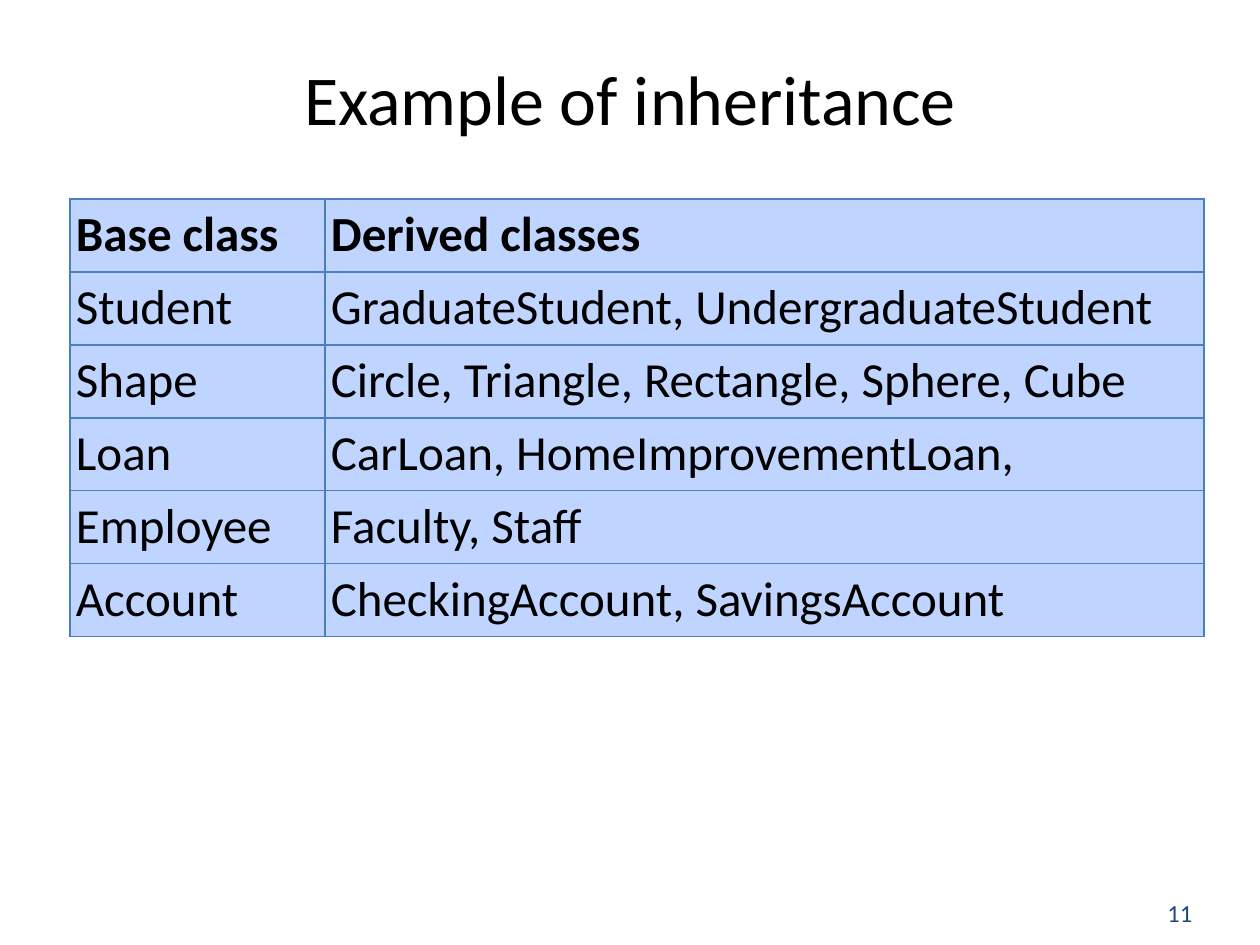
from dataclasses import dataclass

from lxml.etree import SubElement
from pptx import Presentation
from pptx.dml.color import RGBColor as RGB
from pptx.enum.text import MSO_ANCHOR as Anchor, PP_ALIGN as Align
from pptx.oxml.ns import qn
from pptx.util import Emu, Pt

PX = 914400 // 126  # EMU in one px


@dataclass(frozen=True)
class Theme:
    font: str = "Calibri"
    text: str = "000000"
    number: str = "1F497D"
    cell: str = "BFD4FF"
    border: str = "4B7EBC"
    title_size: int = 40
    table_size: int = 28
    number_size: int = 14
    border_width: float = 0.75


@dataclass(frozen=True)
class Label:
    text: str
    box: tuple[int, int, int, int]
    size: int
    color: str
    align: Align


@dataclass(frozen=True)
class ClassRow:
    base: str
    derived: str
    bold: bool = False


THEME = Theme()

LABELS = [
    Label("11", (1155, 892, 84, 42), THEME.number_size, THEME.number, Align.LEFT),
    Label("Example of inheritance", (63, 48, 1134, 98),
          THEME.title_size, THEME.text, Align.CENTER),
]

ROWS = [
    ClassRow("Base class", "Derived classes", bold=True),
    ClassRow("Student", "GraduateStudent, UndergraduateStudent"),
    ClassRow("Shape", "Circle, Triangle, Rectangle, Sphere, Cube"),
    ClassRow("Loan", "CarLoan, HomeImprovementLoan,"),
    ClassRow("Employee", "Faculty, Staff"),
    ClassRow("Account", "CheckingAccount, SavingsAccount"),
]

TABLE_LEFT, TABLE_TOP = 70, 199
COLUMN_WIDTHS = (255, 879)
ROW_HEIGHT = 73
CELL_MARGIN = 6


def px(n: int) -> Emu:
    return Emu(n * PX)


def style(p, size: int, color: str, bold: bool = False) -> None:
    p.font.name = THEME.font
    p.font.size = Pt(size)
    p.font.bold = bold
    p.font.color.rgb = RGB.from_string(color)


def add_label(s, label: Label) -> None:
    tf = s.shapes.add_textbox(*map(px, label.box)).text_frame
    tf.word_wrap = True
    tf.vertical_anchor = Anchor.MIDDLE
    p = tf.paragraphs[0]
    p.text = label.text
    p.alignment = label.align
    style(p, label.size, label.color)


def add_borders(cell) -> None:
    """Draw all four edges; they must precede the fill in tcPr."""
    tc_pr = cell._tc.get_or_add_tcPr()
    for i, side in enumerate(("lnL", "lnR", "lnT", "lnB")):
        ln = SubElement(tc_pr, qn(f"a:{side}"), w=str(Pt(THEME.border_width)))
        fill = SubElement(ln, qn("a:solidFill"))
        SubElement(fill, qn("a:srgbClr"), val=THEME.border)
        tc_pr.insert(i, ln)


def fill_cell(cell, text: str, bold: bool) -> None:
    cell.margin_left = cell.margin_right = px(CELL_MARGIN)
    cell.margin_top = cell.margin_bottom = px(CELL_MARGIN)
    cell.fill.solid()
    cell.fill.fore_color.rgb = RGB.from_string(THEME.cell)
    add_borders(cell)
    p = cell.text_frame.paragraphs[0]
    p.text = text
    style(p, THEME.table_size, THEME.text, bold)


def add_class_table(s, rows: list[ClassRow]) -> None:
    table = s.shapes.add_table(
        len(rows), len(COLUMN_WIDTHS), px(TABLE_LEFT), px(TABLE_TOP),
        px(sum(COLUMN_WIDTHS)), px(ROW_HEIGHT * len(rows))).table
    table.first_row = table.horz_banding = False
    for column, width in zip(table.columns, COLUMN_WIDTHS):
        column.width = px(width)
    for i, row in enumerate(rows):
        table.rows[i].height = px(ROW_HEIGHT)
        for j, text in enumerate((row.base, row.derived)):
            fill_cell(table.cell(i, j), text, row.bold)


def main() -> None:
    prs = Presentation()
    prs.slide_width, prs.slide_height = px(1260), px(945)
    s = prs.slides.add_slide(prs.slide_layouts[6])

    # Page number and title
    for label in LABELS:
        add_label(s, label)

    # Base classes and what derives from them
    add_class_table(s, ROWS)

    prs.save("out.pptx")


if __name__ == "__main__":
    main()
